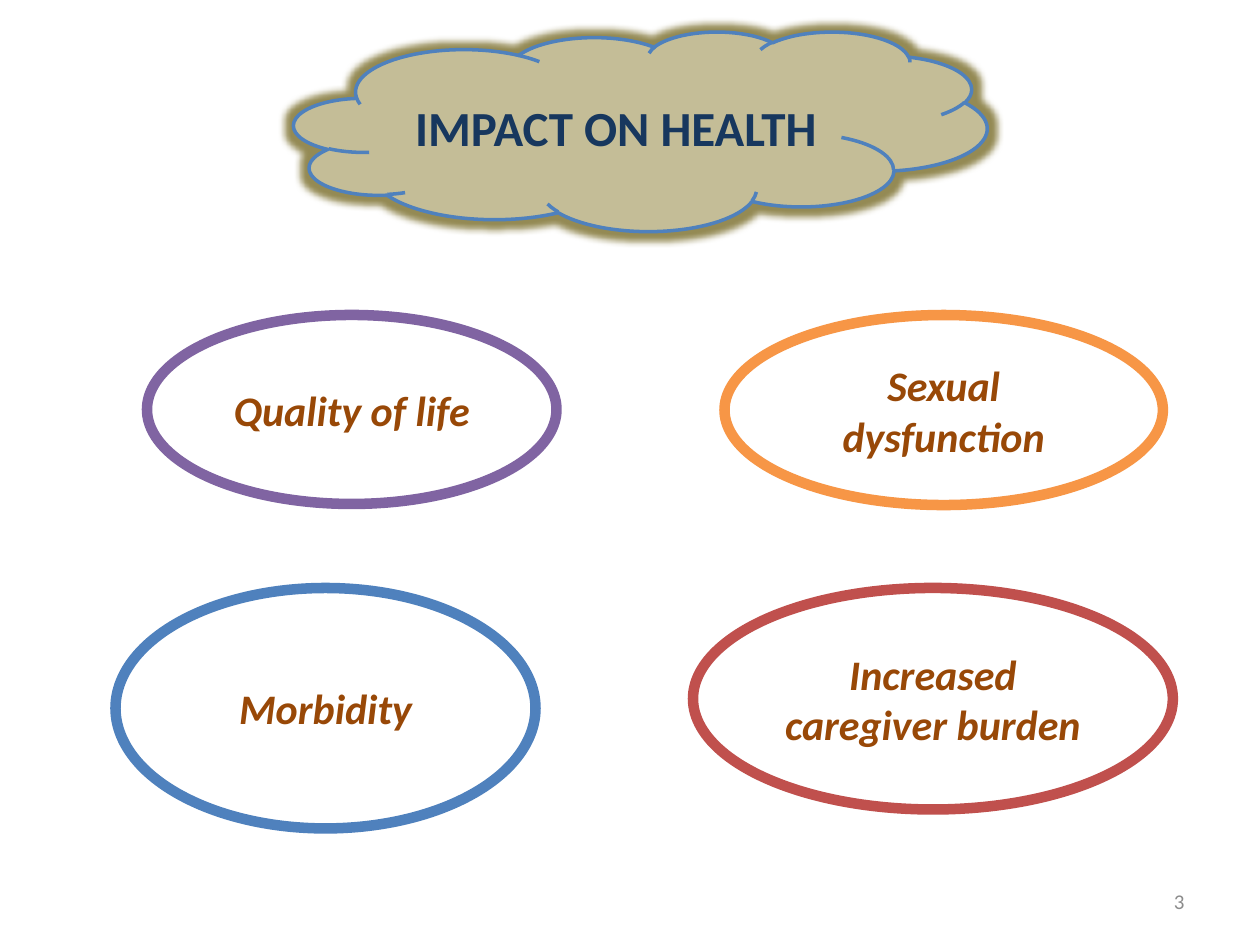
"""Build the 'Impact on health' slide: a glowing cloud title over four outlined ellipses."""
from lxml import etree
from pptx import Presentation
from pptx.dml.color import RGBColor
from pptx.enum.shapes import MSO_SHAPE
from pptx.enum.text import MSO_ANCHOR, PP_ALIGN
from pptx.oxml.ns import qn
from pptx.util import Inches, Pt

CLOUD, ELLIPSE = MSO_SHAPE.CLOUD, MSO_SHAPE.OVAL
MIDDLE = MSO_ANCHOR.MIDDLE
CENTER, RIGHT = PP_ALIGN.CENTER, PP_ALIGN.RIGHT

COLORS = {
    "white": "FFFFFF", "tan": "C4BD97", "olive": "948A54", "navy": "17375E",
    "brown": "984807", "blue": "4F81BD", "purple": "8064A2",
    "orange": "F79646", "red": "C0504D", "gray": "8C8C8C",
}

deck = Presentation()
deck.slide_width, deck.slide_height = Inches(10), Inches(7.5)
page = deck.slides.add_slide(deck.slide_layouts[6])
COLUMN = deck.slide_width / 120
ROW = deck.slide_height / 90


def place(left, top, width, height):
    return [round(n * unit) for n, unit in
            ((left, COLUMN), (top, ROW), (width, COLUMN), (height, ROW))]


def write(box, text, size, color, align=CENTER, bold=False, italic=False):
    frame = box.text_frame
    frame.word_wrap = True
    frame.vertical_anchor = MIDDLE
    frame.text = text
    para = frame.paragraphs[0]
    para.alignment = align
    font = para.runs[0].font
    font.name, font.size = "Calibri", Pt(size)
    font.bold, font.italic = bold, italic
    font.color.rgb = RGBColor.from_string(COLORS[color])


bubbles = [
    (CLOUD, (28, 3, 66, 19), "tan", "blue", 2, "IMPACT ON HEALTH", 28, "navy"),
]
impacts = [
    ((14, 30, 39, 18), "purple", "Quality of life"),
    ((69, 30, 41.75, 18.1), "orange", "Sexual dysfunction"),
    ((11, 56, 40, 22.9), "blue", "Morbidity"),
    ((66, 56, 45.7, 21.1), "red", "Increased caregiver burden"),
]
for area, outline, label in impacts:
    bubbles.append((ELLIPSE, area, "white", outline, 6, label, 24, "brown"))

for kind, area, fill, outline, weight, label, size, ink in bubbles:
    bubble = page.shapes.add_shape(kind, *place(*area))
    bubble.shadow.inherit = False
    bubble.fill.solid()
    bubble.fill.fore_color.rgb = RGBColor.from_string(COLORS[fill])
    bubble.line.color.rgb = RGBColor.from_string(COLORS[outline])
    bubble.line.width = Pt(weight)
    write(bubble, label, size, ink, bold=True, italic=kind == ELLIPSE)
    if kind == CLOUD:
        effects = bubble.element.spPr.find(qn("a:effectLst"))
        glow = etree.SubElement(effects, qn("a:glow"), rad=str(Pt(8)))
        etree.SubElement(glow, qn("a:srgbClr"), val=COLORS["olive"])

page_number = page.shapes.add_textbox(*place(86, 83.4, 28, 4.8))
write(page_number, "3", 12, "gray", align=RIGHT)

deck.save("out.pptx")
